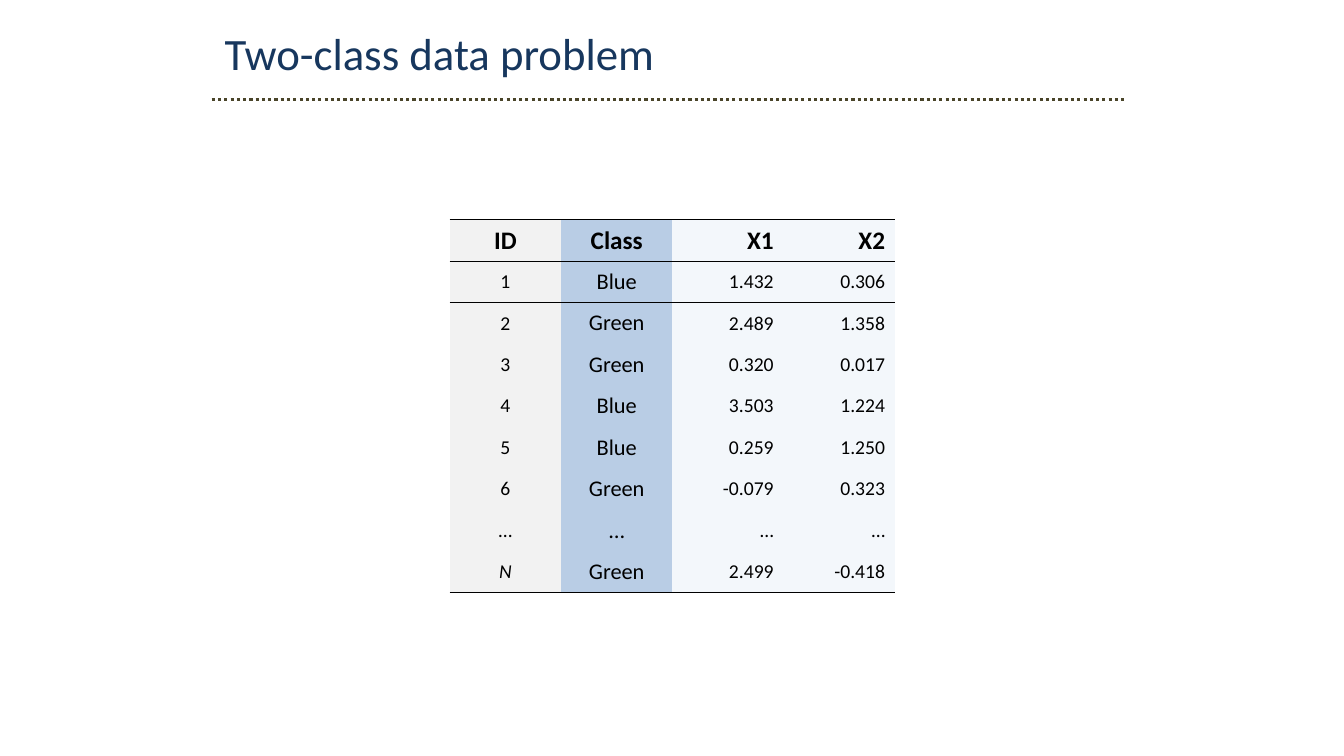
from dataclasses import dataclass

from lxml import etree
from pptx import Presentation
from pptx.dml.color import RGBColor
from pptx.enum.dml import MSO_LINE
from pptx.enum.shapes import MSO_CONNECTOR
from pptx.enum.text import MSO_ANCHOR, PP_ALIGN
from pptx.oxml.ns import qn
from pptx.util import Inches, Pt

LEFT, CENTER, RIGHT = PP_ALIGN.LEFT, PP_ALIGN.CENTER, PP_ALIGN.RIGHT
MIDDLE = MSO_ANCHOR.MIDDLE
STRAIGHT = MSO_CONNECTOR.STRAIGHT
DOTTED = MSO_LINE.ROUND_DOT

HEADER = ("ID", "Class", "X1", "X2")
ROWS = (
    ("1", "Blue", "1.432", "0.306"),
    ("2", "Green", "2.489", "1.358"),
    ("3", "Green", "0.320", "0.017"),
    ("4", "Blue", "3.503", "1.224"),
    ("5", "Blue", "0.259", "1.250"),
    ("6", "Green", "-0.079", "0.323"),
    ("…", "…", "…", "…"),
    ("N", "Green", "2.499", "-0.418"),
)
ALIGNS = (CENTER, CENTER, RIGHT, RIGHT)
RULED_EDGES = (0, 1, 2, len(ROWS) + 1)


@dataclass(frozen=True)
class Theme:
    """Colours, font and type sizes of the slide."""
    font: str = "Calibri"
    title: str = "17375E"
    ink: str = "000000"
    divider: str = "4A452A"
    columns: tuple = ("F2F2F2", "B9CDE5", "F3F7FB", "F3F7FB")
    title_size: int = 32
    header_size: int = 18
    body_sizes: tuple = (14, 16, 14, 14)


def write(tf, text, font, size, color, align=LEFT, bold=False, italic=False):
    """Fill a text frame with one formatted line."""
    p = tf.paragraphs[0]
    p.alignment = align
    r = p.add_run()
    r.text = text
    r.font.name, r.font.size = font, Pt(size)
    r.font.bold, r.font.italic = bold, italic
    r.font.color.rgb = RGBColor.from_string(color)


def set_border(cell, side, color=None):
    """Draw one side of a cell, or clear it when there is no colour."""
    tcPr = cell._tc.get_or_add_tcPr()
    ln = etree.SubElement(tcPr, qn(f"a:ln{side}"), w=str(Pt(1)))
    if color:
        fill = etree.SubElement(ln, qn("a:solidFill"))
        etree.SubElement(fill, qn("a:srgbClr"), val=color)
    else:
        etree.SubElement(ln, qn("a:noFill"))


class SlideBuilder:
    """Adds styled elements to one slide."""

    def __init__(self, slide, theme):
        self.s, self.theme = slide, theme

    def title(self, text, x, y, w, h):
        """Add the slide title."""
        tf = self.s.shapes.add_textbox(Inches(x), Inches(y), Inches(w), Inches(h)).text_frame
        tf.word_wrap = True
        write(tf, text, self.theme.font, self.theme.title_size, self.theme.title)

    def divider(self, x1, x2, y):
        """Add a dotted horizontal line."""
        sp = self.s.shapes.add_connector(STRAIGHT, Inches(x1), Inches(y), Inches(x2), Inches(y))
        sp.line.color.rgb = RGBColor.from_string(self.theme.divider)
        sp.line.width = Pt(2.25)
        sp.line.dash_style = DOTTED
        etree.SubElement(sp._element.spPr, qn("a:effectLst"))

    def table(self, rows, x, y, w, h):
        """Add the data table with a header row."""
        table = self.s.shapes.add_table(
            len(rows), len(rows[0]), Inches(x), Inches(y), Inches(w), Inches(h)).table
        table.first_row = table.horz_banding = False
        for i, row in enumerate(rows):
            for j, text in enumerate(row):
                self.cell(table.cell(i, j), text, i, j)

    def cell(self, cell, text, i, j):
        """Style and fill the cell at row i and column j."""
        theme, header = self.theme, i == 0
        edges = {"L": None, "R": None, "T": i, "B": i + 1}
        for side, edge in edges.items():
            set_border(cell, side, theme.ink if edge in RULED_EDGES else None)
        cell.fill.solid()
        cell.fill.fore_color.rgb = RGBColor.from_string(theme.columns[j])
        cell.vertical_anchor = MIDDLE
        size = theme.header_size if header else theme.body_sizes[j]
        write(cell.text_frame, text, theme.font, size, theme.ink,
              align=ALIGNS[j], bold=header, italic=text == "N")


def main():
    """Build and save the slide."""
    prs = Presentation()
    prs.slide_width, prs.slide_height = Inches(13.33), Inches(7.5)
    builder = SlideBuilder(prs.slides.add_slide(prs.slide_layouts[6]), Theme())
    builder.title("Two-class data problem", 2.13, 0.21, 8.94, 0.64)
    builder.table((HEADER, *ROWS), 4.46, 2.18, 4.42, 3.7)
    builder.divider(2.1, 11.16, 0.99)
    prs.save("out.pptx")


if __name__ == "__main__":
    main()
